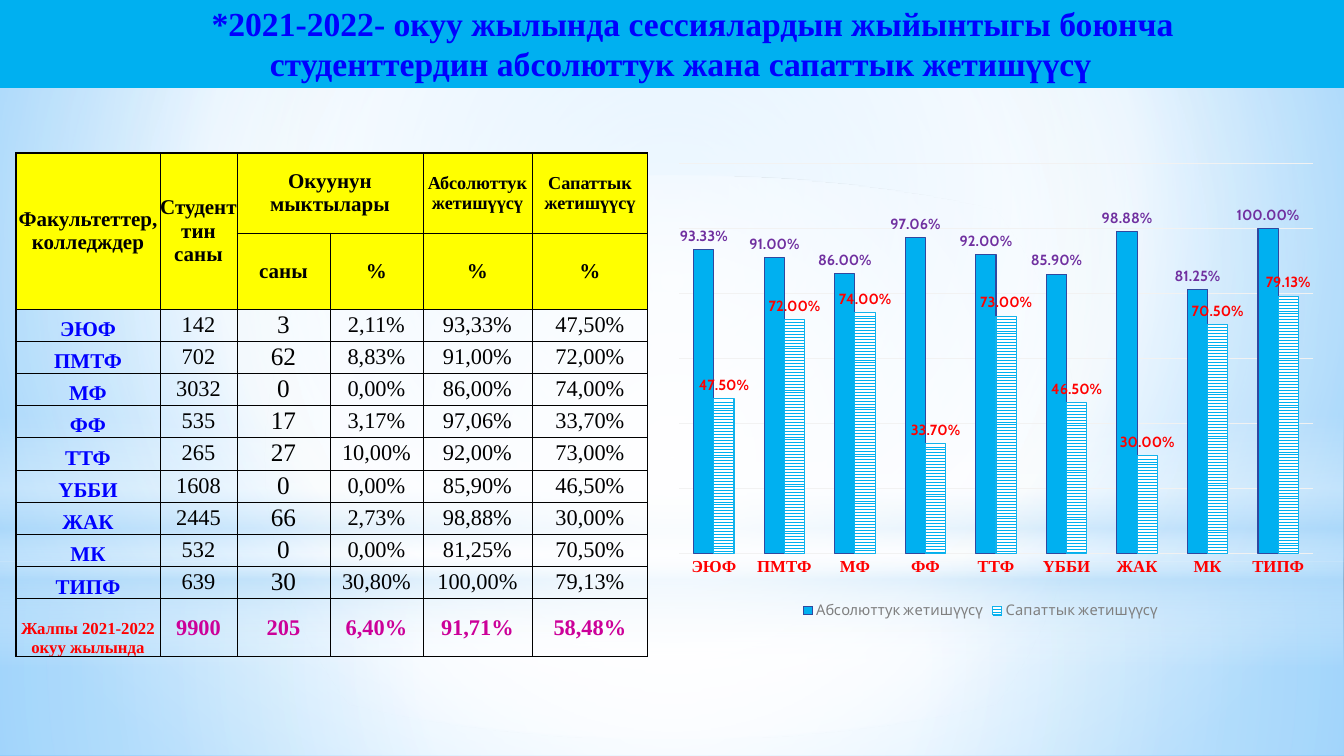
from lxml import etree
from pptx import Presentation
from pptx import util as u
from pptx.chart.data import CategoryChartData
from pptx.dml.color import RGBColor
from pptx.enum import chart as charts, dml, shapes, text
from pptx.oxml import parse_xml
from pptx.oxml.ns import nsdecls, qn

PX = 914400 / 100.8
SERIF, SANS = "Times New Roman", "Cabin"
BLACK = RGBColor(0x00, 0x00, 0x00)
WHITE = RGBColor(0xFF, 0xFF, 0xFF)
BLUE = RGBColor(0x00, 0x00, 0xFF)
RED = RGBColor(0xFF, 0x00, 0x00)
YELLOW = RGBColor(0xFF, 0xFF, 0x00)
MAGENTA = RGBColor(0xCC, 0x00, 0x99)
CYAN = RGBColor(0x00, 0xB0, 0xF0)
NAVY = RGBColor(0x31, 0x48, 0x9F)
SKY = RGBColor(0x12, 0xB2, 0xEB)
PURPLE = RGBColor(0x70, 0x30, 0xA0)
GREY = RGBColor(0x80, 0x80, 0x80)
PALE = RGBColor(0xF2, 0xF2, 0xF2)
MIST = RGBColor(0xB4, 0xDC, 0xFA)
LIGHT_SKY = RGBColor(0x9E, 0xD5, 0xFF)
DEEP_SKY = RGBColor(0x5B, 0xB9, 0xFF)

TITLE = ("*2021-2022- окуу жылында сессиялардын жыйынтыгы боюнча "
         "студенттердин абсолюттук жана сапаттык жетишүүсү")
MEASURES = ["Абсолюттук жетишүүсү", "Сапаттык жетишүүсү"]
FACULTIES = [
    ["ЭЮФ", "142", "3", "2,11%", "93,33%", "47,50%"],
    ["ПМТФ", "702", "62", "8,83%", "91,00%", "72,00%"],
    ["МФ", "3032", "0", "0,00%", "86,00%", "74,00%"],
    ["ФФ", "535", "17", "3,17%", "97,06%", "33,70%"],
    ["ТТФ", "265", "27", "10,00%", "92,00%", "73,00%"],
    ["ҮББИ", "1608", "0", "0,00%", "85,90%", "46,50%"],
    ["ЖАК", "2445", "66", "2,73%", "98,88%", "30,00%"],
    ["МК", "532", "0", "0,00%", "81,25%", "70,50%"],
    ["ТИПФ", "639", "30", "30,80%", "100,00%", "79,13%"],
]
TOTAL = ["Жалпы 2021-2022 окуу жылында", "9900", "205", "6,40%", "91,71%", "58,48%"]
HEADINGS = [["Факультеттер, колледждер", "Студенттин саны", "Окуунун мыктылары", ""] + MEASURES,
            ["", "", "саны", "%", "%", "%"]]
CENTRE = (50, 50, 50, 50)


def px(length):
    return u.Emu(round(length * PX))


def place(box):
    return [px(length) for length in box]


def set_font(font, size, color, bold=False, name=SERIF):
    font.size, font.bold, font.name = u.Pt(size), bold, name
    font.color.rgb = color


def set_gradient(properties, stops, focus=None):
    marks = "".join(
        f'<a:gs pos="{pos * 1000}"><a:srgbClr val="{color}"><a:alpha val="{alpha * 1000}"/></a:srgbClr></a:gs>'
        for pos, color, alpha in stops)
    if focus:
        sides = " ".join(f'{side}="{part * 1000}"' for side, part in zip("ltrb", focus))
        shade = f'<a:path path="circle"><a:fillToRect {sides}/></a:path>'
    else:
        shade = '<a:lin ang="5400000" scaled="0"/>'
    gradient = parse_xml(f'<a:gradFill {nsdecls("a")} rotWithShape="1"><a:gsLst>{marks}</a:gsLst>{shade}</a:gradFill>')
    solid = properties.find(qn("a:solidFill"))
    properties.replace(solid, gradient)


def add_glow(page, box, stops, focus=CENTRE, preset=shapes.MSO_SHAPE.RECTANGLE):
    glow = page.shapes.add_shape(preset, *place(box))
    glow.shadow.inherit = False
    glow.line.fill.background()
    glow.fill.solid()
    set_gradient(glow.element.spPr, stops, focus)


def add_backdrop(page, width, height):
    fill = page.background.fill
    fill.solid()
    fill.fore_color.rgb = WHITE
    set_gradient(page.element.cSld.find(qn("p:bg")).find(qn("p:bgPr")),
                 [(0, LIGHT_SKY, 100), (60, WHITE, 100), (100, DEEP_SKY, 100)], (20, 10, 20, 60))
    add_glow(page, (0, 562, width, height - 562), [(0, WHITE, 91), (37, WHITE, 76), (100, MIST, 79)])
    add_glow(page, (0, 0, width, 562), [(0, WHITE, 89), (48, WHITE, 62), (100, MIST, 79)])
    add_glow(page, (0, 415, width, 252), [(0, WHITE, 0), (29, WHITE, 30), (45, MIST, 40),
                                          (55, WHITE, 26), (65, MIST, 60), (100, WHITE, 0)], None)
    add_glow(page, (0, 176, width, 562), [(0, WHITE, 100), (56, WHITE, 0)],
             preset=shapes.MSO_SHAPE.OVAL)


def add_title(page, box, width):
    left, top, title_width, height = box
    for y in (22, 56):
        band = page.shapes.add_connector(shapes.MSO_CONNECTOR.STRAIGHT, *place((0, y, width, y)))
        band.line.color.rgb, band.line.width = CYAN, u.Pt(46.25)
        etree.SubElement(band.element.spPr, qn("a:effectLst"))
    title = page.shapes.title
    title.element.getparent().append(title.element)
    title.left, title.top, title.width, title.height = place(box)
    frame = title.text_frame
    frame.word_wrap, frame.auto_size = True, text.MSO_AUTO_SIZE.NONE
    frame.vertical_anchor = text.MSO_ANCHOR.MIDDLE
    frame.margin_left = frame.margin_right = px(40)
    frame.margin_top = frame.margin_bottom = px(5)
    para = frame.paragraphs[0]
    para.alignment = text.PP_ALIGN.CENTER
    para._p.get_or_add_pPr().set("indent", str(px(24)))
    span = para.add_run()
    span.text = TITLE
    set_font(span.font, 24, BLUE, True)


def set_borders(cell, outer_sides):
    properties = cell._tc.get_or_add_tcPr()
    for index, side in enumerate("LRTB"):
        width = 12700 if side in outer_sides else 6350
        properties.insert(index, parse_xml(
            f'<a:ln{side} {nsdecls("a")} w="{width}"><a:solidFill><a:srgbClr val="{BLACK}"/></a:solidFill></a:ln{side}>'))


def cell_style(row, column, last):
    if row < 2:
        return (13 if row == 0 and column > 3 else 15), BLACK, True
    if row == last:
        return (16, MAGENTA, True) if column else (12, RED, True)
    if column == 0:
        return 15, BLUE, True
    return (18 if column == 2 else 16), BLACK, False


def add_results_table(page, box):
    rows = HEADINGS + FACULTIES + [TOTAL]
    last = len(rows) - 1
    columns = [144, 77, 93, 93, 109, 116]
    count = len(FACULTIES)
    body = [290 * (i + 1) // count - 290 * i // count for i in range(count)]
    table = page.shapes.add_table(len(rows), len(columns), *place(box)).table
    table.first_row = table.horz_banding = False
    for column, width in zip(table.columns, columns):
        column.width = px(width)
    for row, height in zip(table.rows, [80, 76] + body + [58]):
        row.height = px(height)
    for r, values in enumerate(rows):
        for c, value in enumerate(values):
            cell = table.cell(r, c)
            cell.margin_left = cell.margin_right = cell.margin_top = cell.margin_bottom = 0
            cell.vertical_anchor = text.MSO_ANCHOR.BOTTOM if r > 1 and c == 0 else text.MSO_ANCHOR.MIDDLE
            if r < 2:
                cell.fill.solid()
                cell.fill.fore_color.rgb = YELLOW
            else:
                cell.fill.background()
            edges = {"L": c == 0, "R": c == len(columns) - 1, "T": r == 0, "B": r == last}
            set_borders(cell, [side for side, outer in edges.items() if outer])
            if value:
                para = cell.text_frame.paragraphs[0]
                para.alignment = text.PP_ALIGN.CENTER
                span = para.add_run()
                span.text = value
                set_font(span.font, *cell_style(r, c, last))
    for first, end in (((0, 0), (1, 0)), ((0, 1), (1, 1)), ((0, 2), (0, 3))):
        table.cell(*first).merge(table.cell(*end))


def add_results_chart(page, box):
    data = CategoryChartData(number_format="0.00%")
    data.categories = [row[0] for row in FACULTIES]
    for column, name in enumerate(MEASURES, 4):
        data.add_series(name, [round(float(row[column].rstrip("%").replace(",", ".")) / 100, 4)
                               for row in FACULTIES])
    chart = page.shapes.add_chart(charts.XL_CHART_TYPE.COLUMN_CLUSTERED, *place(box), data).chart
    set_font(chart.font, 10, BLACK, name=SANS)
    chart.has_title = False
    chart.has_legend = True
    chart.legend.position = charts.XL_LEGEND_POSITION.BOTTOM
    chart.legend.include_in_layout = False
    set_font(chart.legend.font, 10.5, GREY, name=SANS)
    names = chart.category_axis
    names.major_tick_mark = charts.XL_TICK_MARK.NONE
    names.format.line.fill.background()
    set_font(names.tick_labels.font, 12, RED, True)
    scale = chart.value_axis
    scale.visible = False
    scale.minimum_scale, scale.maximum_scale, scale.major_unit = 0, 1.2, 0.2
    scale.major_gridlines.format.line.color.rgb = PALE
    scale.major_gridlines.format.line.width = u.Pt(0.75)
    plot = chart.plots[0]
    plot.gap_width, plot.overlap, plot.vary_by_categories = 150, 0, False
    for series, outline, label_color in zip(plot.series, (NAVY, SKY), (PURPLE, RED)):
        series.format.line.color.rgb, series.format.line.width = outline, u.Pt(0.75)
        labels = series.data_labels
        labels.show_value = True
        labels.number_format, labels.number_format_is_linked = "0.00%", False
        labels.position = charts.XL_LABEL_POSITION.OUTSIDE_END
        set_font(labels.font, 10.5, label_color, True, SANS)
    absolute, quality = (series.format.fill for series in plot.series)
    absolute.solid()
    absolute.fore_color.rgb = CYAN
    quality.patterned()
    quality.pattern = dml.MSO_PATTERN.ZIG_ZAG
    quality.fore_color.rgb, quality.back_color.rgb = CYAN, WHITE
    area = chart.element.chart.plotArea
    for old in area.findall(qn("c:layout")):
        area.remove(old)
    parts = {"x": 0.046, "y": 0.038, "w": 0.954, "h": 0.815}
    modes = "".join(f'<c:{key}Mode val="edge"/>' for key in "xy")
    sizes = "".join(f'<c:{key} val="{part}"/>' for key, part in parts.items())
    area.insert(0, parse_xml(f'<c:layout {nsdecls("c")}><c:manualLayout><c:layoutTarget val="inner"/>'
                             f'{modes}{sizes}</c:manualLayout></c:layout>'))


def main():
    deck = Presentation()
    deck.slide_width, deck.slide_height = px(1344), px(756)
    page = deck.slides.add_slide(deck.slide_layouts[5])
    add_backdrop(page, 1344, 756)
    add_title(page, (69, -3, 1223, 92), 1344)
    add_results_table(page, (16, 153, 632, 504))
    add_results_chart(page, (648, 145, 666, 479))
    deck.save("out.pptx")


if __name__ == "__main__":
    main()
